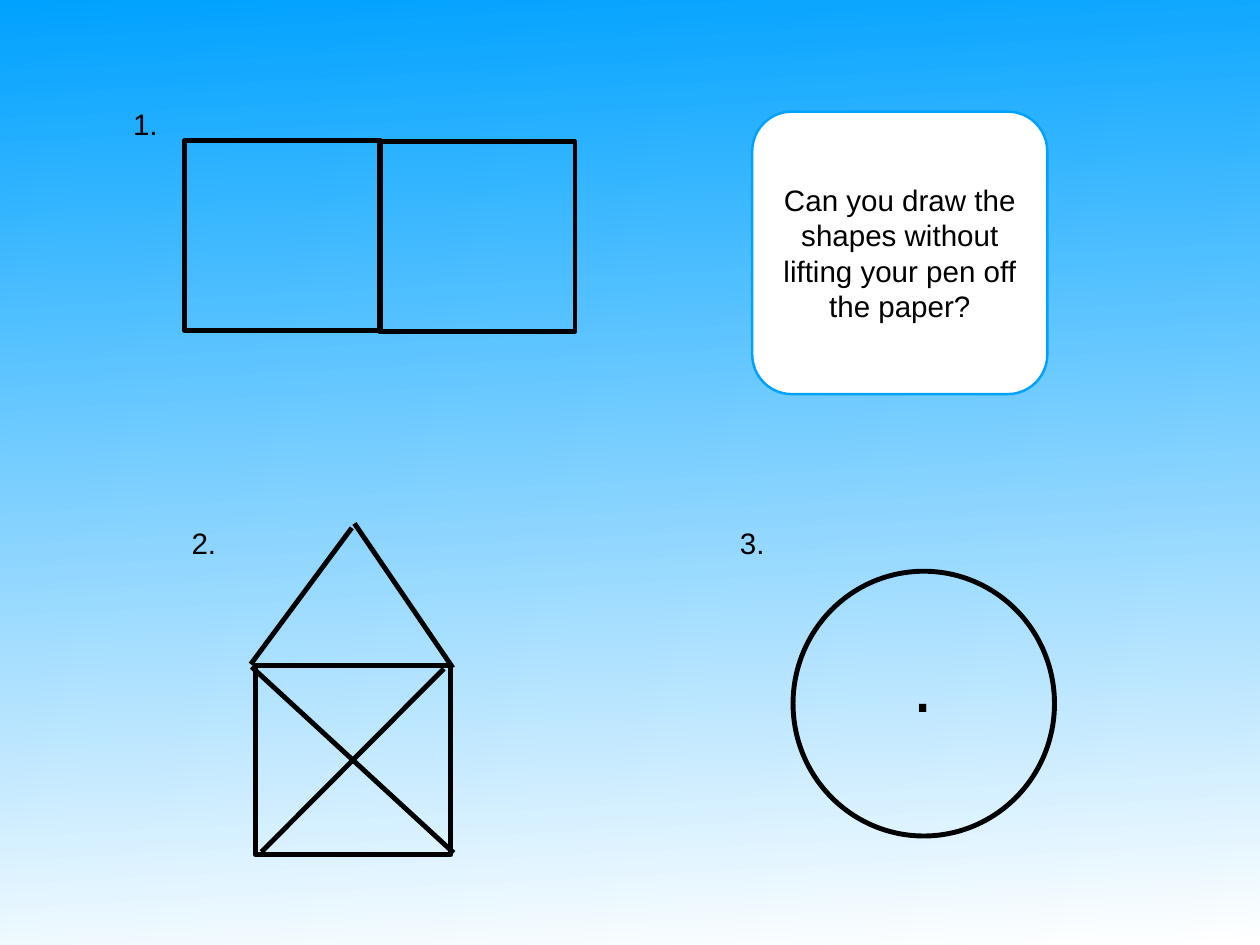
from pptx import Presentation
from pptx import util as u
from pptx.dml.color import RGBColor
from pptx.enum import shapes, text
from pptx.oxml.ns import qn
from lxml import etree

THEME = {
    "ink": RGBColor(0, 0, 0),
    "paper": RGBColor(0xFF, 0xFF, 0xFF),
    "sky": RGBColor(0x00, 0xA2, 0xFF),
    "font": "Arial",
    "body": u.Pt(24),
    "dot": u.Pt(62),
    "stroke": u.Pt(4),
    "card_stroke": u.Pt(2),
    "inset": u.Inches(0.06),
}

prs = Presentation()
prs.slide_width, prs.slide_height = u.Inches(14.22), u.Inches(10.67)
slide = prs.slides.add_slide(prs.slide_layouts[6])


def place(*shares):
    """Turn alternating x, y shares (percent of the slide) into lengths."""
    sides = (prs.slide_width, prs.slide_height)
    return [round(sides[i % 2] * share / 100) for i, share in enumerate(shares)]


def write(part, words, size, wrap):
    frame = part.text_frame
    frame.margin_left = frame.margin_right = THEME["inset"]
    frame.margin_top = frame.margin_bottom = THEME["inset"]
    frame.vertical_anchor = text.MSO_ANCHOR.MIDDLE
    frame.word_wrap = wrap
    if not wrap:
        frame.auto_size = text.MSO_AUTO_SIZE.SHAPE_TO_FIT_TEXT
    line = frame.paragraphs[0]
    line.text = words
    line.alignment = text.PP_ALIGN.CENTER
    line.font.name, line.font.size = THEME["font"], size
    line.font.color.rgb = THEME["ink"]


# Background: white at the bottom, blue at the top
sky = slide.background.fill
sky.gradient()
sky.gradient_angle = 93
for stop, colour in zip(sky.gradient_stops, ("paper", "sky")):
    stop.color.rgb = THEME[colour]

# Outlines: the two squares, the house wall and the circle
SQUARE = (15.54, 20.06)
RECT, OVAL = shapes.MSO_SHAPE.RECTANGLE, shapes.MSO_SHAPE.OVAL
for kind, corner, extent in (
    (RECT, (14.63, 14.9), SQUARE),
    (RECT, (30.1, 15), SQUARE),
    (RECT, (20.25, 70.38), SQUARE),
    (OVAL, (62.94, 60.45), (20.75, 28.02)),
):
    outline = slide.shapes.add_shape(kind, *place(*corner, *extent))
    outline.shadow.inherit = False
    outline.fill.background()
    outline.line.color.rgb = THEME["ink"]
    outline.line.width = THEME["stroke"]

# House: two roof slopes, then two diagonals
for ends in (
    (19.9, 70.29, 27.92, 55.86),
    (35.94, 70.67, 28.13, 55.39),
    (20.75, 90.16, 35.23, 70.76),
    (36.01, 90.25, 19.97, 70.57),
):
    beam = slide.shapes.add_connector(shapes.MSO_CONNECTOR.STRAIGHT, *place(*ends))
    beam.line.color.rgb = THEME["ink"]
    beam.line.width = THEME["stroke"]
    etree.SubElement(beam._element.spPr, qn("a:effectLst"))

# Puzzle numbers and the dot in the circle
NUMBER = (2.81, 4.69)
for words, size, corner, extent in (
    ("1.", "body", (10.13, 10.78), NUMBER),
    ("2.", "body", (14.77, 55.11), NUMBER),
    ("3.", "body", (58.3, 55.11), NUMBER),
    (".", "dot", (72.01, 67.01), (2.53, 10.4)),
):
    mark = slide.shapes.add_textbox(*place(*corner, *extent))
    write(mark, words, THEME[size], wrap=False)

# Question card
card = slide.shapes.add_shape(
    shapes.MSO_SHAPE.ROUNDED_RECTANGLE, *place(59.7, 11.81, 23.42, 29.9))
card.adjustments[0] = 0.14
card.shadow.inherit = False
card.fill.solid()
card.fill.fore_color.rgb = THEME["paper"]
card.line.color.rgb = THEME["sky"]
card.line.width = THEME["card_stroke"]
write(card, "Can you draw the shapes without lifting your pen off the paper?",
      THEME["body"], wrap=True)

prs.save("out.pptx")
